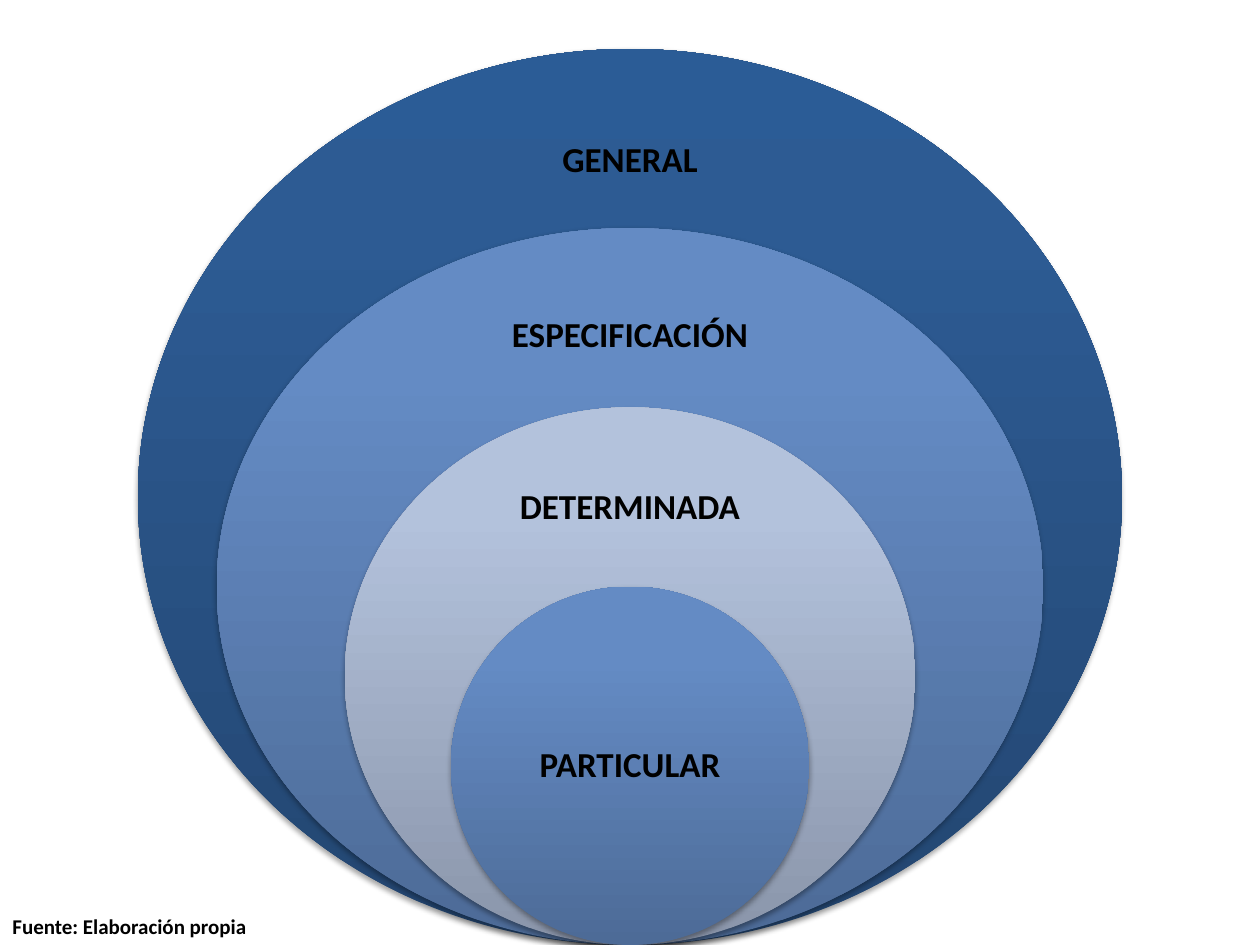
from pptx import Presentation
from pptx.dml.color import RGBColor
from pptx.enum.shapes import MSO_SHAPE
from pptx.enum.text import MSO_ANCHOR, MSO_AUTO_SIZE, PP_ALIGN
from pptx.oxml import parse_xml
from pptx.oxml.ns import nsdecls
from pptx.util import Pt

COLORS = {
    "text": "000000",
    "shadow": "000000",
    "navy": ("234671", "2D5B93", "2B5C96"),
    "blue": ("4D6B97", "648BC4", "638BC7"),
    "pale": ("8A95AA", "B3C2DC", "B4C3DE"),
}
STOPS = (0, 80, 100)

# label, gradient, ellipse width, label width, label top and height (shares of the ellipse)
LEVELS = [
    ("GENERAL", "navy", 562.4, 157, 0.05, 0.15),
    ("ESPECIFICACIÓN", "blue", 472.3, 165, 0.06, 0.18),
    ("DETERMINADA", "pale", 326, 152, 0.075, 0.225),
    ("PARTICULAR", "blue", 204.8, 145, 0.25, 0.5),
]


def fill_gradient(shape, colors):
    """Fill from the bottom colour up to the top one."""
    stops = "".join(
        f'<a:gs pos="{stop * 1000}"><a:srgbClr val="{color}"/></a:gs>'
        for stop, color in zip(STOPS, colors)
    )
    gradient = parse_xml(
        f'<a:gradFill {nsdecls("a")} rotWithShape="1"><a:gsLst>{stops}</a:gsLst>'
        '<a:lin ang="16200000" scaled="0"/></a:gradFill>'
    )
    shape._element.spPr.prstGeom.addnext(gradient)


def add_soft_shadow(shape):
    shape.shadow.inherit = False
    effects = shape._element.spPr.find("{*}effectLst")
    effects.append(parse_xml(
        f'<a:outerShdw {nsdecls("a")} blurRad="{Pt(3.1)}" dist="{Pt(1.8)}" '
        'dir="5400000" rotWithShape="0">'
        f'<a:srgbClr val="{COLORS["shadow"]}"><a:alpha val="35000"/></a:srgbClr>'
        '</a:outerShdw>'
    ))


def add_text(slide, box, text, size):
    text_box = slide.shapes.add_textbox(*(Pt(length) for length in box))
    frame = text_box.text_frame
    paragraph = frame.paragraphs[0]
    paragraph.text = text
    font = paragraph.font
    font.name, font.size, font.bold = "Calibri", Pt(size), True
    font.color.rgb = RGBColor.from_string(COLORS["text"])
    return frame


def add_label(slide, box, text):
    frame = add_text(slide, box, text, 20)
    frame.word_wrap = True
    frame.vertical_anchor = MSO_ANCHOR.MIDDLE
    frame.margin_left = frame.margin_right = Pt(11.2)
    frame.margin_top = frame.margin_bottom = Pt(11.2)
    paragraph = frame.paragraphs[0]
    paragraph.alignment = PP_ALIGN.CENTER
    paragraph.line_spacing = 0.9


def add_stacked_venn(slide, left, top, width, height):
    """Nest the levels on a shared bottom edge, each a fifth of the height shorter."""
    center, bottom = left + width / 2, top + height
    for index, (text, gradient, ring_width, label_width, offset, share) in enumerate(LEVELS):
        ring_height = height * (1 - index / 5)
        ring_top = bottom - ring_height
        ring = slide.shapes.add_shape(
            MSO_SHAPE.OVAL, Pt(center - ring_width / 2), Pt(ring_top),
            Pt(ring_width), Pt(ring_height))
        fill_gradient(ring, COLORS[gradient])
        ring.line.fill.background()
        add_soft_shadow(ring)
        label_box = (center - label_width / 2, ring_top + offset * ring_height,
                     label_width, share * ring_height)
        add_label(slide, label_box, text)


def add_source_note(slide, box):
    frame = add_text(slide, box, "Fuente: Elaboración propia", 12)
    frame.word_wrap = False
    frame.auto_size = MSO_AUTO_SIZE.SHAPE_TO_FIT_TEXT


def main():
    presentation = Presentation()
    presentation.slide_width, presentation.slide_height = Pt(720), Pt(540)
    slide = presentation.slides.add_slide(presentation.slide_layouts[6])
    add_stacked_venn(slide, 78.8, 28, 562.4, 512)
    add_source_note(slide, (0, 518.2, 171.4, 21.8))
    presentation.save("out.pptx")


if __name__ == "__main__":
    main()
